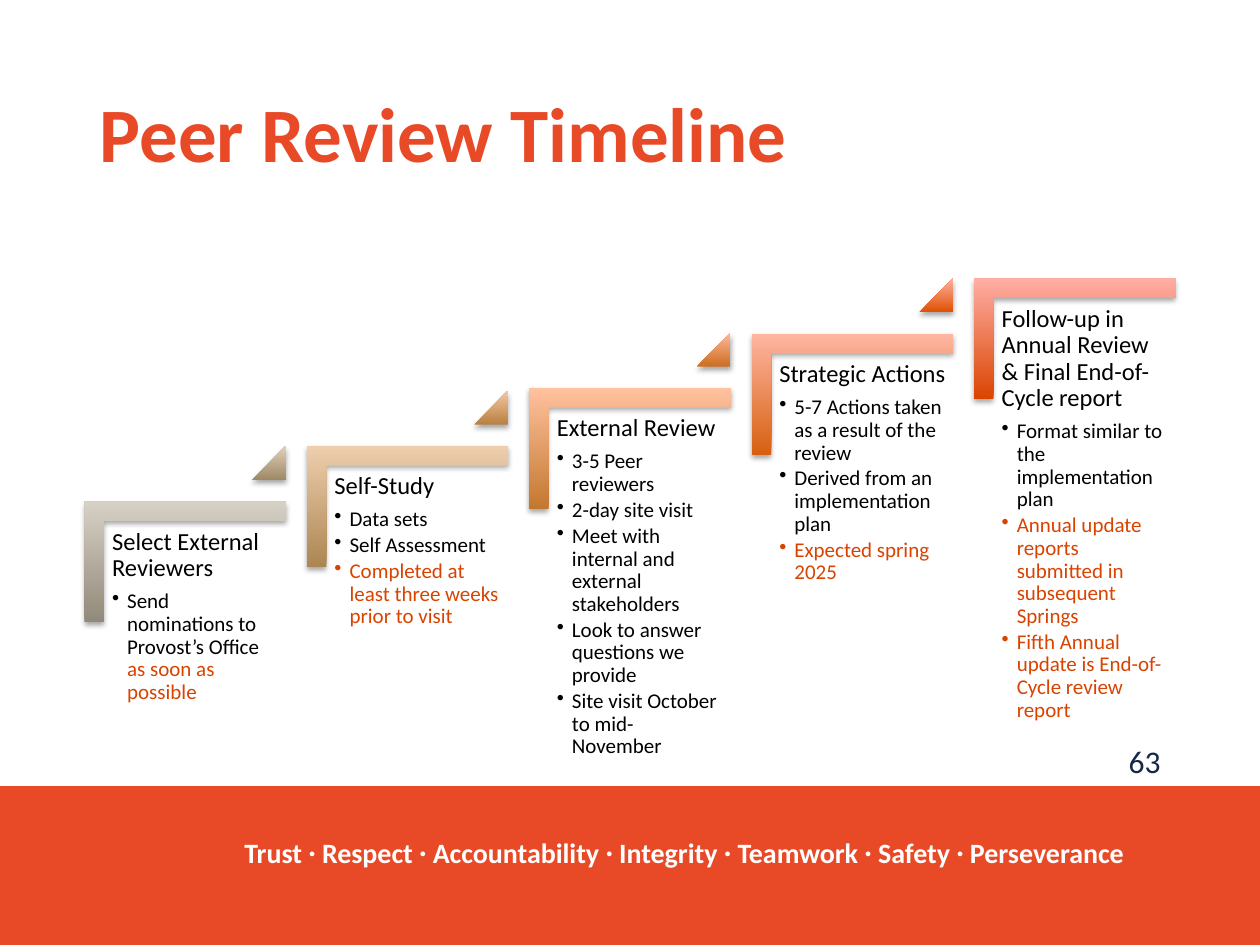
from dataclasses import dataclass

from lxml import etree
from pptx import Presentation
from pptx.dml.color import RGBColor
from pptx.enum.shapes import MSO_SHAPE
from pptx.enum.text import MSO_ANCHOR, MSO_AUTO_SIZE, PP_ALIGN
from pptx.oxml.ns import qn
from pptx.util import Inches, Pt

RECT = MSO_SHAPE.RECTANGLE
WEDGE = MSO_SHAPE.ISOSCELES_TRIANGLE
TOP = MSO_ANCHOR.TOP
LEFT, MID, RIGHT = PP_ALIGN.LEFT, PP_ALIGN.CENTER, PP_ALIGN.RIGHT


@dataclass(frozen=True)
class Theme:
    font: str = "Calibri"
    brand: str = "E84A27"
    navy: str = "13294B"
    ink: str = "000000"
    hot: str = "D94300"
    paper: str = "FFFFFF"
    title: int = 44
    page: int = 18
    head: int = 14
    item: int = 12
    value: int = 16
    gap: int = 18
    dot: int = 11


T = Theme()
PITCH = 1.765
VALUES = ("Trust", "Respect", "Accountability", "Integrity", "Teamwork",
          "Safety", "Perseverance")

# Top of the corner, its dark and light shades, heading, items.
# In an item, the words after "|" are highlighted.
STEPS = (
    (3.66, "918979", "D7D1C5", "Select External Reviewers",
     ("Send nominations to Provost’s Office |as soon as possible",)),
    (3.22, "AC8652", "EECEAD", "Self-Study",
     ("Data sets", "Self Assessment",
      "|Completed at least three weeks prior to visit")),
    (2.76, "C3782F", "FFC19E", "External Review",
     ("3-5 Peer reviewers", "2-day site visit",
      "Meet with internal and external stakeholders",
      "Look to answer questions we provide",
      "Site visit October to mid-November")),
    (2.33, "D66010", "FFB6A1", "Strategic Actions",
     ("5-7 Actions taken as a result of the review",
      "Derived from an implementation plan", "|Expected spring 2025")),
    (1.89, "DA4400", "FFAEA5",
     "Follow-up in Annual Review & Final End-of-Cycle report",
     ("Format similar to the implementation plan",
      "|Annual update reports submitted in subsequent Springs",
      "|Fifth Annual update is End-of-Cycle review report")),
)
WEDGES = (("9E8966", "E2D1B9"), ("B88040", "F8C8A4"),
          ("CD6D1F", "FFBB9F"), ("DF5001", "FFB2A3"))


def write(para, text, size, color=T.ink, bold=False, base=0):
    """Add a run; base lifts it by a percentage of its size."""
    run = para.add_run()
    run.text = text
    font = run.font
    font.name, font.size, font.bold = T.font, Pt(size), bold
    font.color.rgb = RGBColor.from_string(color)
    if base:
        run._r.get_or_add_rPr().set("baseline", str(base * 1000))


def place(shape, *box):
    shape.left, shape.top, shape.width, shape.height = map(Inches, box)


def add_box(shapes, *box, inset=None):
    frame = shapes.add_textbox(*map(Inches, box)).text_frame
    frame.word_wrap = True
    if inset is not None:
        frame.margin_left = frame.margin_right = Inches(inset)
        frame.margin_top = frame.margin_bottom = Inches(inset)
    return frame


def bullet(para):
    props = para._p.get_or_add_pPr()
    props.set("marL", str(Inches(0.12)))
    props.set("indent", str(-Inches(0.12)))
    etree.SubElement(props, qn("a:buChar"), char="•")


def shade(shape, dark, light):
    """Fill upwards from dark to light and cast a soft shadow."""
    shape.fill.gradient()
    for stop, color in zip(shape.fill.gradient_stops, (dark, light)):
        stop.color.rgb = RGBColor.from_string(color)
    shape.fill.gradient_angle = 90
    shape.line.fill.background()
    shape.shadow.inherit = False
    props = shape._element.spPr
    props.find(qn("a:gradFill")).set("rotWithShape", "0")
    cast = etree.SubElement(
        props.find(qn("a:effectLst")), qn("a:outerShdw"),
        blurRad=str(Pt(3.1)), dist=str(Pt(1.8)), dir="5400000",
        rotWithShape="0")
    tint = etree.SubElement(cast, qn("a:srgbClr"), val=T.ink)
    etree.SubElement(tint, qn("a:alpha"), val="35000")


def add_corner(shapes, box, colors):
    """Add the "corner" preset, which MSO_SHAPE does not list."""
    shape = shapes.add_shape(RECT, *map(Inches, box))
    geom = shape._element.spPr.find(qn("a:prstGeom"))
    geom.set("prst", "corner")
    guides = geom.find(qn("a:avLst"))
    for name in ("adj1", "adj2"):
        etree.SubElement(guides, qn("a:gd"), name=name, fmla="val 16100")
    shape.rotation = 90
    shade(shape, *colors)


def add_wedge(shapes, box, colors):
    shape = shapes.add_shape(WEDGE, *map(Inches, box))
    shape.adjustments[0] = 1
    shade(shape, *colors)


def add_step(shapes, index, top, dark, light, head, items):
    left = 0.83 + index * PITCH
    add_corner(shapes, (left + 0.16, top, 0.96, 1.6), (dark, light))
    frame = add_box(shapes, left, top + 0.48, 1.44, 1.26, inset=0.06)
    para = frame.paragraphs[0]
    para.line_spacing, para.space_after = 0.9, Pt(4.9)
    write(para, head, T.head)
    for item in items:
        para = frame.add_paragraph()
        para.level = 1
        para.line_spacing, para.space_after = 0.9, Pt(1.8)
        bullet(para)
        for text, color in zip(item.split("|"), (T.ink, T.hot)):
            if text:
                write(para, text, T.item, color)
    if index < len(WEDGES):
        add_wedge(shapes, (left + 1.17, top - 0.12, 0.27, 0.27),
                  WEDGES[index])


def add_title(slide, text):
    title = slide.shapes.title
    place(title, 0.69, 0.71, 8.62, 1.45)
    frame = title.text_frame
    frame.vertical_anchor, frame.auto_size = TOP, MSO_AUTO_SIZE.NONE
    para = frame.paragraphs[0]
    para.alignment, para.line_spacing = LEFT, 0.9
    write(para, text, T.title, T.brand, bold=True)


def add_footer(shapes):
    bar = shapes.add_shape(RECT, *map(Inches, (0, 6.24, 10, 1.26)))
    bar.fill.solid()
    bar.fill.fore_color.rgb = RGBColor.from_string(T.brand)
    bar.line.fill.background()
    bar.shadow.inherit = False
    frame = add_box(shapes, 0.86, 6.6, 9.14, 0.56)
    frame.margin_top = 0
    para = frame.paragraphs[0]
    para.alignment = MID
    style = {"color": T.paper, "bold": True}
    for index, value in enumerate(VALUES):
        if index:
            write(para, " ", T.gap, **style)
            write(para, "•", T.dot, base=30, **style)
            write(para, " ", T.gap, **style)
        write(para, value, T.value, **style)


def add_page(shapes, number):
    para = add_box(shapes, 7.06, 5.84, 2.25, 0.4).paragraphs[0]
    para.alignment = RIGHT
    write(para, number, T.page, T.navy)


def main():
    deck = Presentation()
    deck.slide_width, deck.slide_height = Inches(10), Inches(7.5)
    slide = deck.slides.add_slide(deck.slide_layouts[5])
    add_footer(slide.shapes)
    add_title(slide, "Peer Review Timeline")
    add_page(slide.shapes, "63")
    stairs = slide.shapes.add_group_shape().shapes
    for index, step in enumerate(STEPS):
        add_step(stairs, index, *step)
    deck.save("out.pptx")


if __name__ == "__main__":
    main()
